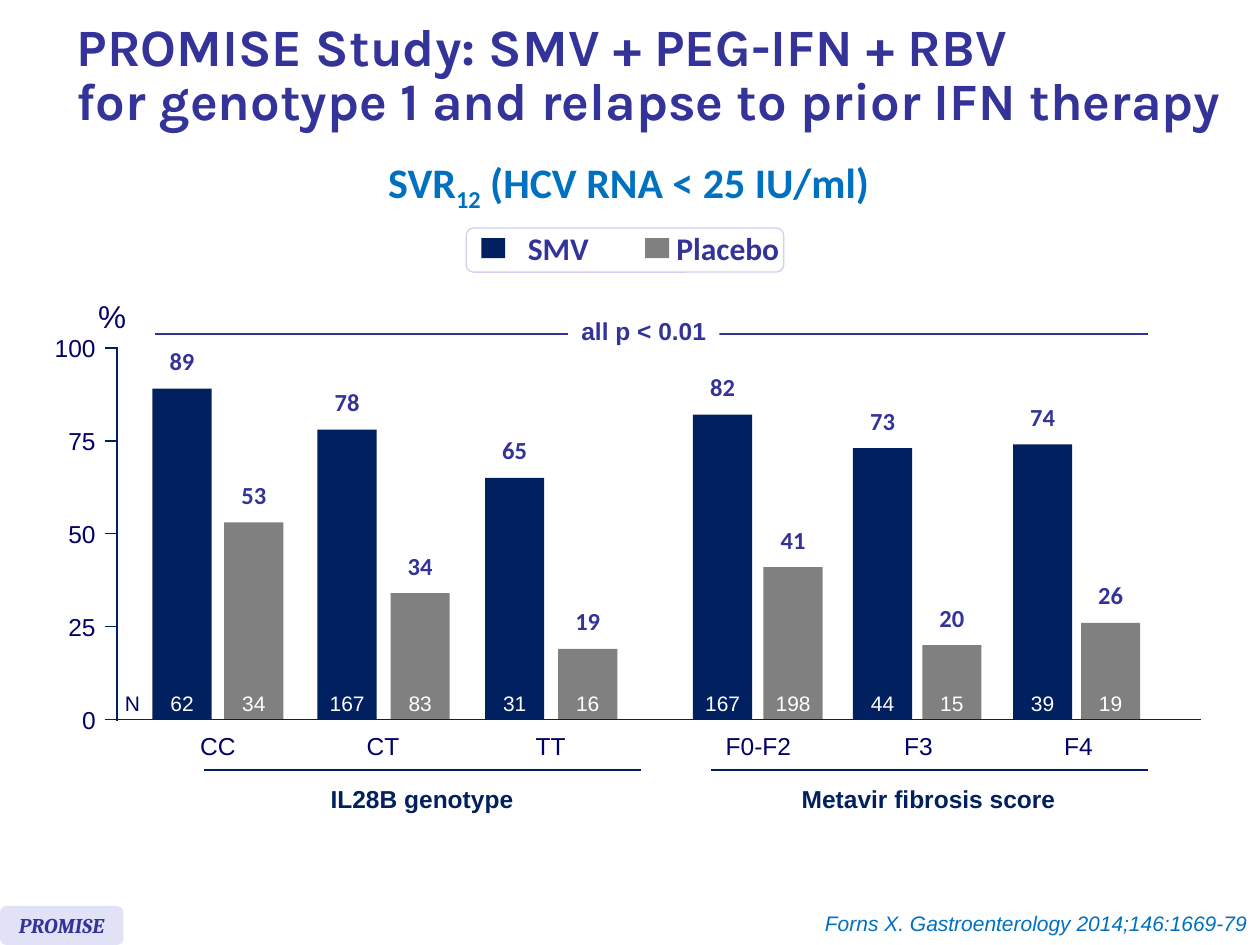
"""Build the PROMISE study slide with SVR12 bars by genotype and fibrosis score."""
import pptx
import pptx.util
import pptx.dml.color
import pptx.enum.shapes
import pptx.enum.text
import pptx.oxml
import pptx.oxml.ns

hue = pptx.dml.color.RGBColor.from_string
Pt = pptx.util.Pt
Form = pptx.enum.shapes.MSO_SHAPE
Side = pptx.enum.text.PP_ALIGN
Mid = pptx.enum.text.MSO_ANCHOR.MIDDLE
NAVY, GRAY, BLUE, INK, SKY, WHITE = "002060", "808080", "333399", "000066", "0070C0", "FFFFFF"

deck = pptx.Presentation()
deck.slide_width = pptx.util.Inches(10)
deck.slide_height = pptx.util.Inches(7.5)
cell = deck.slide_width // 100
slide = deck.slides.add_slide(deck.slide_layouts[6])


def area(x, y, w, h, fill=None, form=Form.RECTANGLE):
    spot = [round(n * cell) for n in (x, y, w, h)]
    if fill is None:
        return slide.shapes.add_textbox(*spot)
    shape = slide.shapes.add_shape(form, *spot)
    shape.shadow.inherit = False
    shape.fill.solid()
    shape.fill.fore_color.rgb = hue(fill)
    shape.line.fill.background()
    return shape


def write(shape, parts, size, font, tone, bold=False, slant=False, side=Side.CENTER, mid=False, pad=None):
    frame = shape.text_frame
    frame.word_wrap = False
    frame.vertical_anchor = Mid if mid else pptx.enum.text.MSO_ANCHOR.TOP
    if pad is not None:
        frame.margin_left = frame.margin_right = frame.margin_top = frame.margin_bottom = round(pad * cell)
    line = frame.paragraphs[0]
    line.text = parts[0]
    for part in parts[1:]:
        line.add_run().text = part
    line.alignment = side
    for run in line.runs:
        run.font.size, run.font.name = Pt(size), font
        run.font.bold, run.font.italic = bold, slant
        run.font.color.rgb = hue(tone)
    return line


tag = area(0, 71.9, 9.8, 3.1, "E2E2F6", Form.ROUNDED_RECTANGLE)
write(tag, ["PROMISE"], 12, "Cambria", BLUE, True, True, mid=True)
write(area(63.7, 71.8, 36.3, 3), ["Forns X. Gastroenterology 2014;146:1669-79"],
      12, "Arial", SKY, slant=True, side=Side.RIGHT)

title = area(5.1, 0.8, 94.9, 10.7)
head = "PROMISE Study: SMV + PEG-IFN + RBV\vfor genotype 1 and relapse to prior IFN therapy"
write(title, [head], 30, "Karla", BLUE, True, side=Side.LEFT, mid=True).line_spacing = 0.85
title.text_frame.word_wrap = True

sub = write(area(28.9, 13.2, 42, 4.4), ["SVR", "12", " (HCV RNA < 25 IU/ml)"], 24, "Calibri", SKY, True)
sub.line_spacing = Pt(23.6)
sub.runs[1].font._element.set("baseline", "-25000")

key = area(37, 18.1, 25.2, 3.5, WHITE, Form.ROUNDED_RECTANGLE)
key.line.color.rgb = hue("D0D0F0")
key.line.width = Pt(0.75)
for name, fill, x, left, wide in [("SMV", NAVY, 38.2, 40.9, 6.9), ("Placebo", GRAY, 51.2, 52.7, 10.3)]:
    area(x, 18.9, 1.9, 1.6, fill)
    write(area(left, 17.7, wide, 4), [name], 18, "Calibri", BLUE, True, side=Side.LEFT)

base, step = 57.1, 0.295
rules = [(8.3, base, 95.3, base, NAVY, 1), (9.3, 27.5, 9.3, 57.2, NAVY, 1),
         (12.3, 26.5, 91.1, 26.5, BLUE, 1.5)]
rules += [(x, 61.1, x + 34.7, 61.1, NAVY, 1.5) for x in (16.2, 56.4)]
write(area(6.8, 23.1, 4.2, 4), ["%"], 18, "Arial", INK, side=Side.LEFT)
for mark in range(0, 101, 25):
    y = base - mark * step
    write(area(4.3, y - 1.2, 3.3, 2.4), [str(mark)], 14, "Arial", INK, side=Side.RIGHT, mid=True, pad=0)
    if mark:
        rules.append((8.3, y, 9.3, y, NAVY, 1))

groups = [("CC", (12.1, 89, 62), (17.8, 53, 34)), ("CT", (25.2, 78, 167), (31, 34, 83)),
          ("TT", (38.5, 65, 31), (44.3, 19, 16)), ("F0-F2", (55, 82, 167), (60.6, 41, 198)),
          ("F3", (67.7, 73, 44), (73.2, 20, 15)), ("F4", (80.4, 74, 39), (85.8, 26, 19))]
write(area(8.9, 54.3, 3.2, 3), ["N"], 12, "Arial", INK, mid=True)
for name, *bars in groups:
    for (x, rate, count), fill in zip(bars, (NAVY, GRAY)):
        top = base - rate * step
        area(x, top, 4.7, rate * step, fill)
        write(area(x + 0.35, top - 4.4, 4, 4.4), [str(rate)], 14, "Calibri", BLUE, True, mid=True, pad=1)
        write(area(x - 0.2, 54.3, 5.1, 3), [str(count)], 12, "Arial", WHITE, mid=True)
    write(area(bars[0][0] + 1.4, 57.5, 7.6, 3.4), [name], 14, "Arial", INK)

for x, wide, name in [(25.2, 16.6, "IL28B genotype"), (62.6, 22.2, "Metavir fibrosis score")]:
    write(area(x, 61.7, wide, 3.4), [name], 14, "Arial", NAVY, True)

for x, y, far, low, tone, thick in rules:
    ends = [round(n * cell) for n in (x, y, far, low)]
    rule = slide.shapes.add_connector(pptx.enum.shapes.MSO_CONNECTOR.STRAIGHT, *ends)
    rule.line.color.rgb = hue(tone)
    rule.line.width = Pt(thick)
    rule.element.spPr.append(pptx.oxml.parse_xml(f"<a:effectLst {pptx.oxml.ns.nsdecls('a')}/>"))

write(area(45.1, 24.6, 12, 3.4, WHITE), ["all p < 0.01"], 14, "Arial", BLUE, True)

deck.save("out.pptx")
